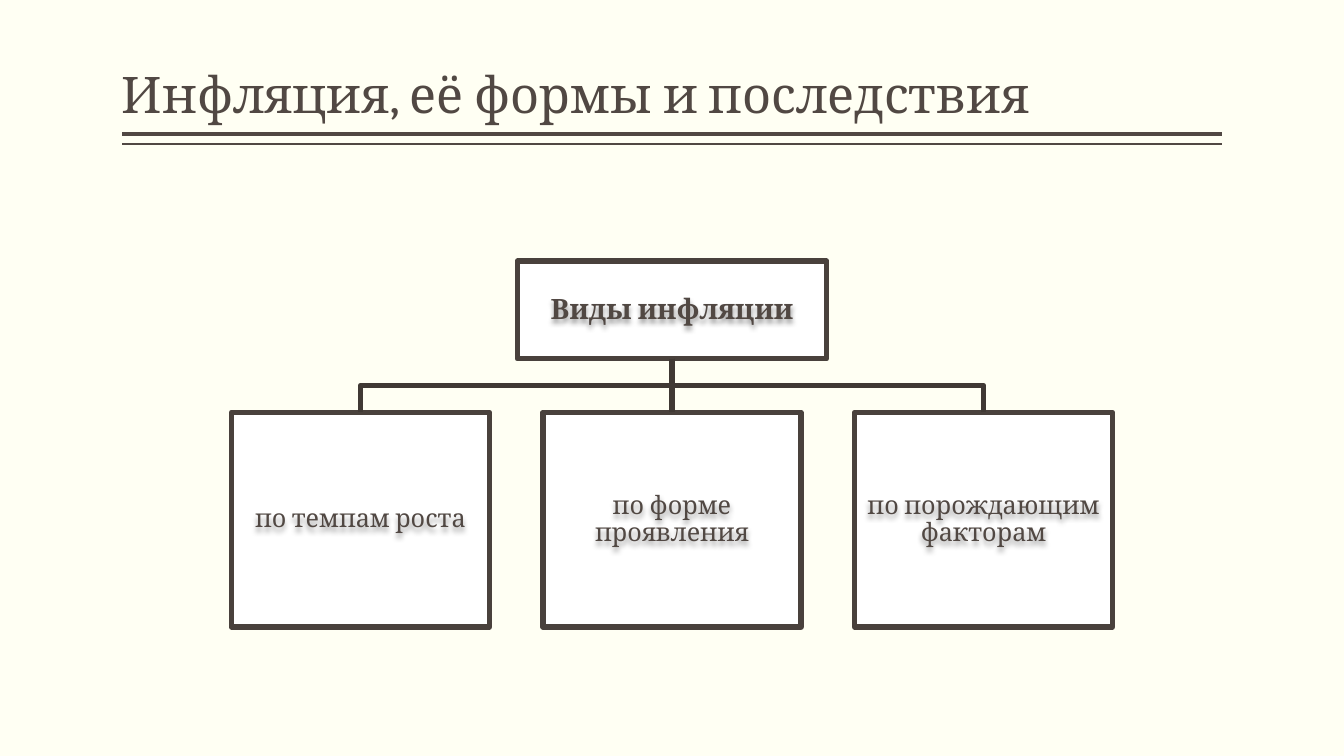
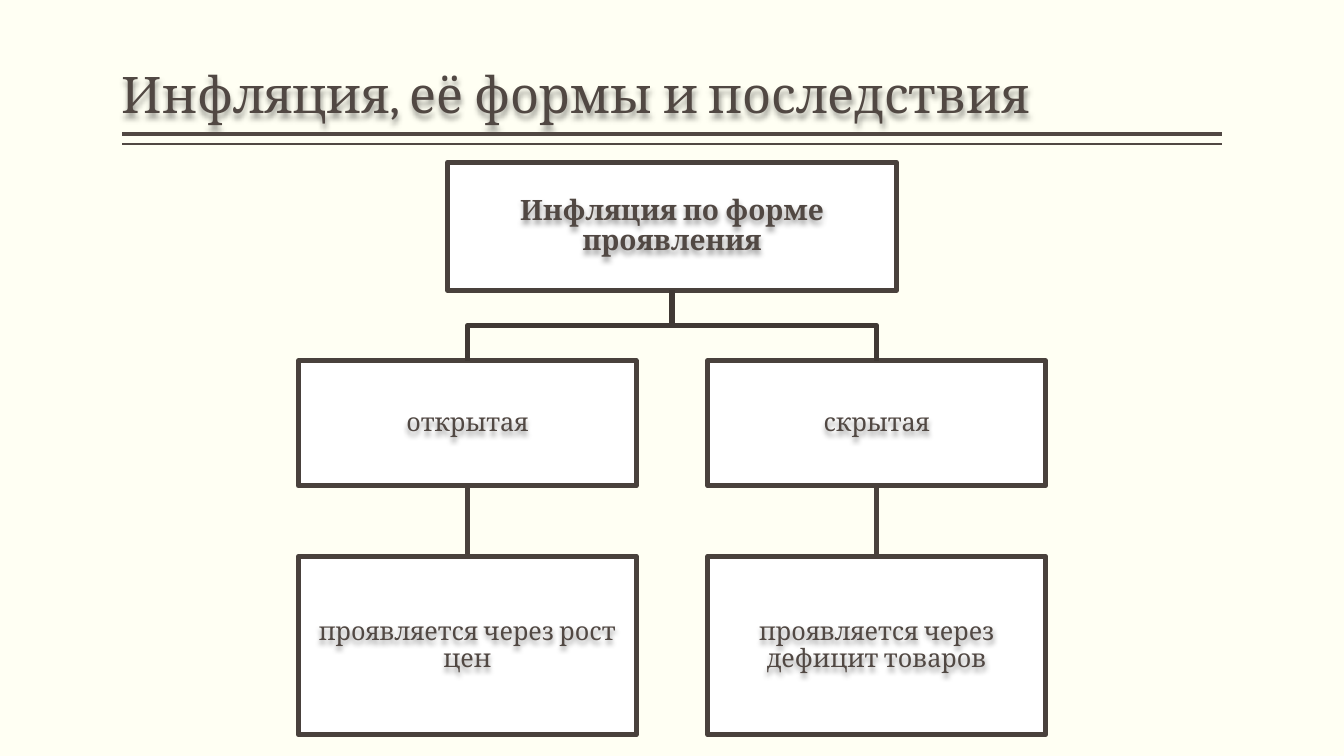
from lxml import etree
from pptx import Presentation
from pptx import util as u
from pptx.dml.color import RGBColor
from pptx.enum import shapes, text
from pptx.oxml import parse_xml
from pptx.oxml.ns import nsdecls, qn

WIDTH, HEIGHT = 13.33, 7.5
MARGIN = 1.21
FONT = "Cambria"
PAPER, WHITE, INK = "FFFFF3", "FFFFFF", "514843"
BORDER, BRANCH = "49413C", "403934"
TREE_LINE = 3.78
TITLE = "Инфляция, её формы и последствия"

# Each tree: root box, then rows of equal boxes centred on the slide.
TREES = [
    {
        "title_shadow": False,
        "root": {"label": "Виды инфляции", "top": 2.59, "width": 3.07, "height": 0.97},
        "box_width": 2.56,
        "pitch": 3.09,
        "rows": [
            {"top": 4.09, "height": 2.13,
             "labels": ["по темпам роста", "по форме проявления", "по порождающим факторам"]},
        ],
    },
    {
        "title_shadow": True,
        "root": {"label": "Инфляция по форме проявления", "top": 1.61, "width": 4.45, "height": 1.27},
        "box_width": 3.35,
        "pitch": 4.06,
        "rows": [
            {"top": 3.58, "height": 1.24, "labels": ["открытая", "скрытая"]},
            {"top": 5.52, "height": 1.77,
             "labels": ["проявляется через рост цен", "проявляется через дефицит товаров"]},
        ],
    },
]


def color(value):
    return RGBColor.from_string(value)


def set_line(shape, value, width):
    shape.line.color.rgb = color(value)
    shape.line.width = u.Pt(width)


def add_shadow(box):
    """Give an unfilled text box a soft shadow, which falls from its letters."""
    box._element.spPr.append(parse_xml(
        f'<a:effectLst {nsdecls("a")}>'
        '<a:outerShdw blurRad="50800" dist="38100" dir="5400000" algn="t" rotWithShape="0">'
        '<a:srgbClr val="000000"><a:alpha val="40000"/></a:srgbClr>'
        '</a:outerShdw></a:effectLst>'))


def add_text(slide, words, left, top, width, height, size=18, bold=False, shadow=True,
             align=text.PP_ALIGN.CENTER, anchor=text.MSO_ANCHOR.MIDDLE, inset=(0.01, 0.01)):
    box = slide.shapes.add_textbox(*map(u.Inches, (left, top, width, height)))
    frame = box.text_frame
    frame.word_wrap = True
    frame.vertical_anchor = anchor
    frame.margin_left = frame.margin_right = u.Inches(inset[0])
    frame.margin_top = frame.margin_bottom = u.Inches(inset[1])
    para = frame.paragraphs[0]
    para.alignment = align
    para.line_spacing = 0.9
    span = para.add_run()
    span.text = words
    span.font.name = FONT
    span.font.size = u.Pt(size)
    span.font.bold = bold
    span.font.color.rgb = color(INK)
    if shadow:
        add_shadow(box)


def add_line(slide, start, end, value, width):
    line = slide.shapes.add_connector(
        shapes.MSO_CONNECTOR.STRAIGHT, *map(u.Inches, (*start, *end)))
    set_line(line, value, width)
    etree.SubElement(line._element.spPr, qn("a:effectLst"))
    return line


def add_heading(slide, shadow):
    add_text(slide, TITLE, MARGIN, 0.08, WIDTH - 2 * MARGIN, 1.2, size=36, shadow=shadow,
             align=text.PP_ALIGN.LEFT, anchor=text.MSO_ANCHOR.BOTTOM, inset=(0, 0.05))
    for y, width in ((1.33, 3), (1.43, 1)):
        add_line(slide, (WIDTH - MARGIN, y), (MARGIN, y), INK, width)


def add_box(slide, label, center, top, width, height, **style):
    place = (center - width / 2, top, width, height)
    box = slide.shapes.add_shape(shapes.MSO_SHAPE.RECTANGLE, *map(u.Inches, place))
    box.shadow.inherit = False
    box.fill.solid()
    box.fill.fore_color.rgb = color(WHITE)
    set_line(box, BORDER, TREE_LINE)
    add_text(slide, label, *place, **style)
    return box


def join(slide, parent, child, value):
    """Link bottom to top: straight when the boxes are aligned, else with an elbow."""
    x1, y1 = parent.left + parent.width // 2, parent.top + parent.height
    x2, y2 = child.left + child.width // 2, child.top
    if abs(x1 - x2) < u.Inches(0.01):
        line = add_line(slide, (0, 0), (1, 1), value, TREE_LINE)
        line.begin_connect(parent, 2)
        line.end_connect(child, 0)
        return
    middle = (y1 + y2) // 2
    builder = slide.shapes.build_freeform(x1, y1)
    builder.add_line_segments([(x1, middle), (x2, middle), (x2, y2)], close=False)
    elbow = builder.convert_to_shape()
    elbow.shadow.inherit = False
    elbow.fill.background()
    set_line(elbow, value, TREE_LINE)


def add_tree(slide, tree):
    center = WIDTH / 2
    root = add_box(slide, center=center, size=20, bold=True, **tree["root"])
    parents, value = [root] * len(tree["rows"][0]["labels"]), BRANCH
    for row in tree["rows"]:
        first = center - tree["pitch"] * (len(row["labels"]) - 1) / 2
        boxes = [add_box(slide, label, first + column * tree["pitch"],
                         row["top"], tree["box_width"], row["height"])
                 for column, label in enumerate(row["labels"])]
        for parent, child in zip(parents, boxes):
            join(slide, parent, child, value)
        parents, value = boxes, BORDER


def main():
    deck = Presentation()
    deck.slide_width, deck.slide_height = u.Inches(WIDTH), u.Inches(HEIGHT)
    paper = deck.slide_master.background.fill
    paper.solid()
    paper.fore_color.rgb = color(PAPER)
    for tree in TREES:
        slide = deck.slides.add_slide(deck.slide_layouts[6])
        add_heading(slide, tree["title_shadow"])
        add_tree(slide, tree)
    deck.save("out.pptx")


if __name__ == "__main__":
    main()
